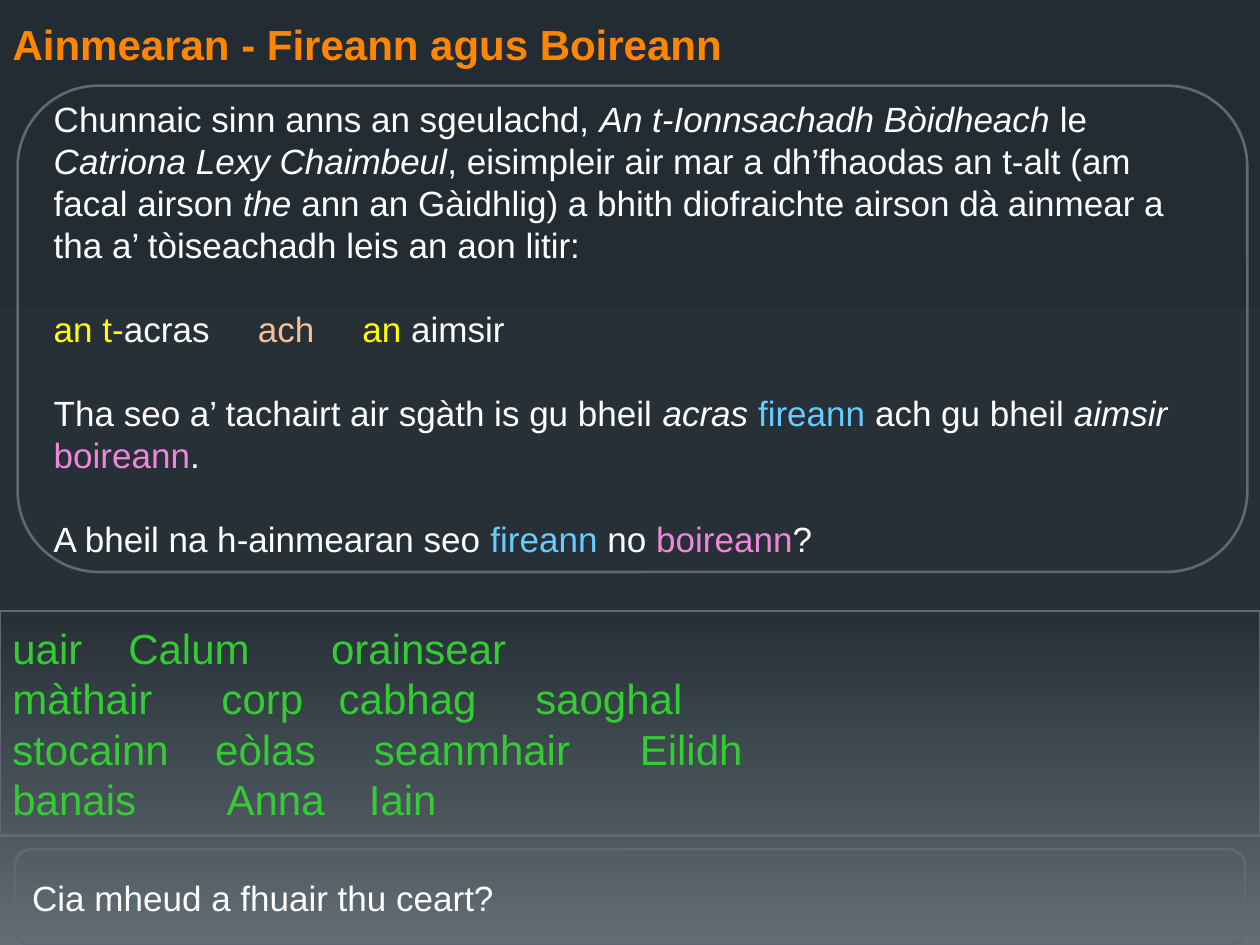
from copy import deepcopy

from lxml import etree
from pptx import Presentation
from pptx import util as u
from pptx.dml.color import RGBColor
from pptx.enum import shapes, text
from pptx.oxml.ns import qn

WHITE, YELLOW, PEACH = "FFFFFF", "FFFF00", "F9BE92"
BLUE, PINK, GREEN, ORANGE, GREY = "66CCFF", "EF86DB", "33CC33", "FF8600", "616873"


def paint(color, value):
    color.rgb = RGBColor.from_string(value)


def write(sp, paragraphs, size, leading, gap=0, anchor=text.MSO_ANCHOR.MIDDLE):
    tf = sp.text_frame
    tf.word_wrap = True
    tf.vertical_anchor = anchor
    for i, (runs, tabs) in enumerate(paragraphs):
        p = tf.add_paragraph() if i else tf.paragraphs[0]
        p.alignment = text.PP_ALIGN.LEFT
        p.line_spacing = u.Pt(leading)
        p.space_before = u.Pt(gap if i else 0)
        if tabs:
            tab_list = etree.SubElement(p._p.get_or_add_pPr(), qn("a:tabLst"))
            for tab in tabs:
                etree.SubElement(tab_list, qn("a:tab"), pos=str(u.Inches(tab)), algn="l")
        p.font.size = u.Pt(size)
        p.font.name = "Arial"
        for words, color, italic in runs:
            r = p.add_run()
            r.text = words
            r.font.italic = italic
            paint(r.font.color, color)


prs = Presentation()
prs.slide_width, prs.slide_height = u.Inches(10), u.Inches(7.5)
s = prs.slides.add_slide(prs.slide_layouts[5])

fill = s.background.fill
fill.gradient()
fill.gradient_angle = 270
stop_list = s.element.find(".//" + qn("a:gsLst"))
stop_list.append(deepcopy(stop_list[-1]))
for stop, (position, value) in zip(
    fill.gradient_stops, [(0, "242C33"), (0.65, "273037"), (1, "636D76")]
):
    stop.position = position
    paint(stop.color, value)

title = s.shapes.title
title.left, title.top, title.width, title.height = map(u.Inches, (0, 0, 7.91, 0.6))
write(title, [([("Ainmearan - Fireann agus Boireann", ORANGE, False)], [])],
      24, 28.8, anchor=text.MSO_ANCHOR.BOTTOM)
title.text_frame.paragraphs[0].font.bold = True

story = [
    ([("Chunnaic sinn anns an sgeulachd, ", WHITE, False),
      ("An t-Ionnsachadh Bòidheach ", WHITE, True),
      ("le", WHITE, False),
      (" Catriona Lexy Chaimbeul", WHITE, True),
      (", eisimpleir air mar a dh’fhaodas an t-alt (am facal airson ", WHITE, False),
      ("the", WHITE, True),
      (" ann an Gàidhlig) a bhith diofraichte airson dà ainmear a tha a’ "
       "tòiseachadh leis an aon litir:", WHITE, False)], []),
    ([("an t-", YELLOW, False), ("acras\t", WHITE, False), ("ach\t", PEACH, False),
      ("an ", YELLOW, False), ("aimsir", WHITE, False)], [1.62, 2.45]),
    ([("Tha seo a’ tachairt air sgàth is gu bheil ", WHITE, False),
      ("acras ", WHITE, True), ("fireann", BLUE, False),
      (" ach gu bheil ", WHITE, False), ("aimsir ", WHITE, True),
      ("boireann", PINK, False), (".", WHITE, False)], []),
    ([("A bheil na h-ainmearan seo ", WHITE, False), ("fireann", BLUE, False),
      (" no ", WHITE, False), ("boireann", PINK, False), ("?", WHITE, False)], []),
]
nouns = [
    ("uair\tCalum\torainsear", [0.92, 2.53]),
    ("màthair\tcorp\tcabhag\tsaoghal", [1.66, 2.59, 4.15]),
    ("stocainn\teòlas\tseanmhair\tEilidh", [1.61, 2.87, 4.98]),
    ("banais\tAnna\tIain", [1.7, 2.83]),
]
noun_rows = [([(words, GREEN, False)], tabs) for words, tabs in nouns]
question = [([("Cia mheud a fhuair thu ceart?", WHITE, False)], [])]

ROUNDED, RECT = shapes.MSO_SHAPE.ROUNDED_RECTANGLE, shapes.MSO_SHAPE.RECTANGLE
for kind, box, paragraphs, size, leading, gap in [
    (ROUNDED, (0.14, 0.68, 9.76, 3.86), story, 20, 24, 24),
    (RECT, (0, 4.85, 10, 1.78), noun_rows, 24, 28.8, 0),
    (ROUNDED, (0.12, 6.74, 9.76, 0.76), question, 20, 24, 0),
]:
    sp = s.shapes.add_shape(kind, *map(u.Inches, box))
    sp.shadow.inherit = False
    sp.fill.background()
    paint(sp.line.color, GREY)
    sp.line.width = u.Pt(1.5)
    write(sp, paragraphs, size, leading, gap)

prs.save("out.pptx")
